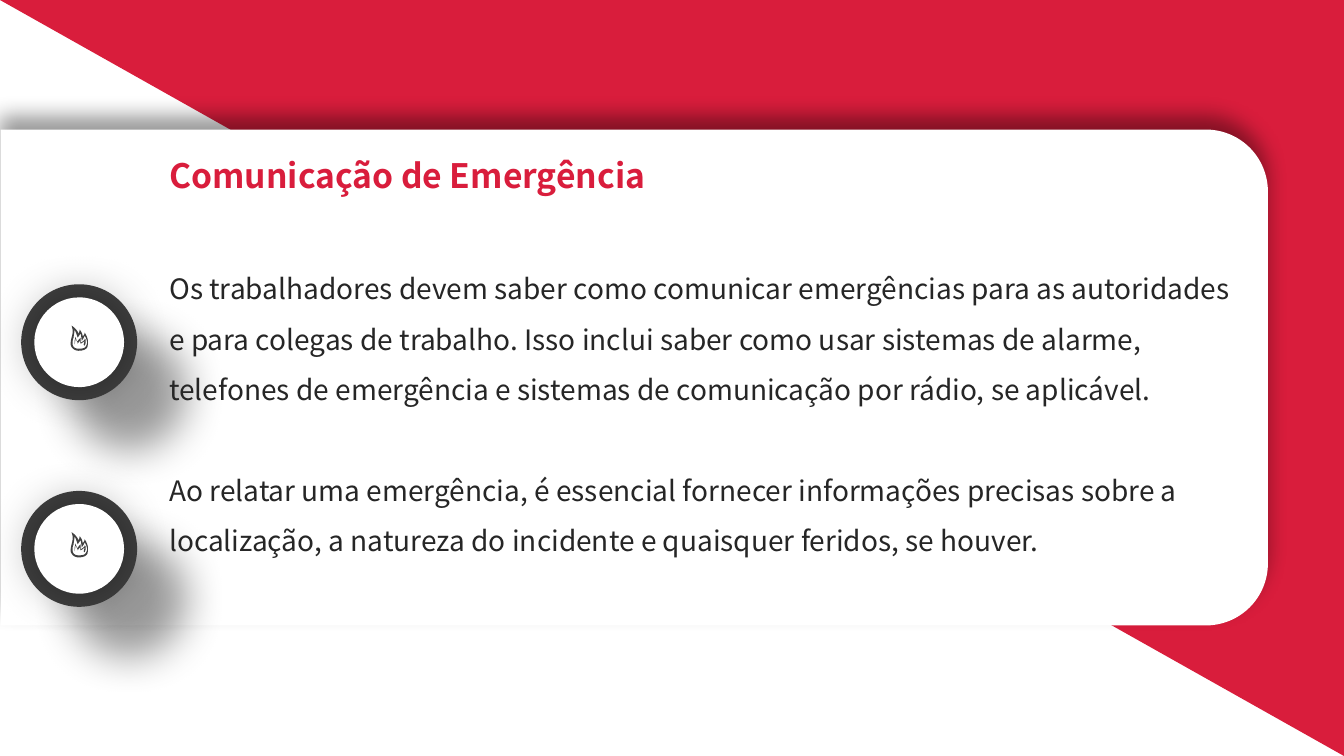
import pptx
import pptx.dml.color
import pptx.enum.shapes
import pptx.enum.text
import pptx.oxml
import pptx.oxml.ns
import pptx.util

Inches = pptx.util.Inches
Pt = pptx.util.Pt
KINDS = pptx.enum.shapes.MSO_SHAPE

# Flame curves in hundredths of an inch: a start, then cubic segments
FLAME = [
    ((16, 19), [(15, 21, 15, 23, 8, 23), (4, 23, 2, 21, 2, 18),
                (2, 16, 2, 14, 3, 12), (3, 10, 4, 7, 4, 4),
                (6, 8, 7, 12, 7, 12), (7, 12, 9, 9, 10, 8),
                (10, 8, 11, 12, 11, 15), (11, 15, 13, 13, 14, 10),
                (16, 13, 17, 17, 16, 19)]),
    ((14, 7), [(14, 9, 12, 11, 12, 11), (12, 7, 9, 4, 9, 4),
               (9, 4, 9, 6, 8, 8), (6, 3, 1, 0, 1, 0),
               (4, 8, 0, 12, 0, 18), (0, 22, 4, 25, 8, 25),
               (15, 25, 17, 22, 17, 20), (18, 16, 17, 11, 14, 7)]),
]
SPARK = [(14, 13), (14, 14), (12.5, 15.5), (10, 17), (10, 12), (8, 14),
         (7, 16), (5.5, 13.5), (5, 11), (4, 15), (4, 19), (4.5, 16), (5, 13),
         (7, 17), (7, 18), (9, 15), (10, 18), (12.5, 16.5), (14, 15),
         (13, 19), (14, 20), (15, 17), (15, 14)]
BODY = [
    "Os trabalhadores devem saber como comunicar emergências para as "
    "autoridades e para colegas de trabalho. Isso inclui saber como usar "
    "sistemas de alarme, telefones de emergência e sistemas de comunicação "
    "por rádio, se aplicável.",
    "Ao relatar uma emergência, é essencial fornecer informações precisas "
    "sobre a localização, a natureza do incidente e quaisquer feridos, se "
    "houver.",
]


def trace(start, curves, steps=6):
    """Return points along a chain of cubic curves."""
    points = [start]
    for ax, ay, bx, by, ex, ey in curves:
        sx, sy = points[-1]
        for step in range(1, steps + 1):
            t = step / steps
            u = 1 - t
            points.append((
                u**3 * sx + 3 * u * u * t * ax + 3 * u * t * t * bx + t**3 * ex,
                u**3 * sy + 3 * u * u * t * ay + 3 * u * t * t * by + t**3 * ey))
    return points


class Deck:
    font = "Noto Sans CJK SC"
    colors = {"red": "D91D3C", "white": "FFFFFF", "dark": "404040",
              "text": "262626", "black": "000000"}

    def __init__(self):
        self.show = pptx.Presentation()
        self.show.slide_width = Inches(13.33)
        self.show.slide_height = Inches(7.5)
        self.slide = self.show.slides.add_slide(self.show.slide_layouts[5])

    def color(self, name):
        return pptx.dml.color.RGBColor.from_string(self.colors[name])

    def paint(self, shape, name):
        shape.shadow.inherit = False
        shape.fill.solid()
        shape.fill.fore_color.rgb = self.color(name)
        shape.line.fill.background()

    def shape(self, kind, box, name, turn=0):
        shape = self.slide.shapes.add_shape(kind, *map(Inches, box))
        shape.rotation = turn
        self.paint(shape, name)
        return shape

    def shade(self, shape, blur, dist=0, angle=0):
        """Add a soft outer shadow; blur and dist in points."""
        effects = shape._element.spPr.find(pptx.oxml.ns.qn("a:effectLst"))
        effects.append(pptx.oxml.parse_xml(
            f'<a:outerShdw {pptx.oxml.ns.nsdecls("a")} blurRad="{Pt(blur)}" '
            f'dist="{Pt(dist)}" dir="{angle * 60000}" algn="ctr" '
            f'rotWithShape="0"><a:srgbClr val="{self.colors["black"]}">'
            '<a:alpha val="40000"/></a:srgbClr></a:outerShdw>'))

    def outline(self, left, top, loops, name):
        """Draw closed loops given in hundredths of an inch."""
        loops = [[(x * 10, y * 10) for x, y in loop] for loop in loops]
        pen = self.slide.shapes.build_freeform(*loops[0][0], scale=Inches(0.001))
        pen.add_line_segments(loops[0][1:])
        for loop in loops[1:]:
            pen.move_to(*loop[0])
            pen.add_line_segments(loop[1:])
        self.paint(pen.convert_to_shape(Inches(left), Inches(top)), name)

    def badge(self, top):
        ring = self.shape(KINDS.OVAL, (0.21, top, 1.15, 1.15), "dark")
        self.shade(ring, 30, 50, 45)
        disc = self.shape(KINDS.OVAL, (0.34, top + 0.13, 0.89, 0.89), "white")
        self.shade(disc, 35)
        flame = [trace(*part) for part in FLAME]
        for loops in (flame, [SPARK]):
            self.outline(0.7, top + 0.41, loops, "dark")

    def fill(self, frame, lines, size, name, bold=False, gap=0):
        """Set the lines as styled paragraphs of a text frame."""
        frame.word_wrap = True
        frame.auto_size = pptx.enum.text.MSO_AUTO_SIZE.NONE
        frame.vertical_anchor = pptx.enum.text.MSO_ANCHOR.TOP
        for index, line in enumerate(lines):
            para = frame.add_paragraph() if index else frame.paragraphs[0]
            para.alignment = pptx.enum.text.PP_ALIGN.LEFT
            para.line_spacing = 1.5
            para.space_before = Pt(gap if index else 0)
            run = para.add_run()
            run.text = line
            run.font.name = self.font
            run.font.size = Pt(size)
            run.font.bold = bold
            run.font.color.rgb = self.color(name)

    def title(self, box, text):
        title = self.slide.shapes.title
        title.left, title.top, title.width, title.height = map(Inches, box)
        self.fill(title.text_frame, [text], 24, "red", bold=True)
        self.slide.shapes._spTree.append(title._element)

    def text(self, box, lines):
        area = self.slide.shapes.add_textbox(*map(Inches, box))
        self.fill(area.text_frame, lines, 20, "text", gap=36)


def main():
    deck = Deck()
    full = (0, 0, 13.33, 7.5)
    deck.shape(KINDS.RECTANGLE, full, "white")
    deck.shape(KINDS.RIGHT_TRIANGLE, full, "red", turn=180)
    panel = deck.shape(KINDS.ROUND_2_SAME_RECTANGLE,
                       (3.83, -2.54, 4.92, 12.57), "white", turn=90)
    panel.adjustments[0] = 0.125
    deck.shade(panel, 15, 9, 270)
    for top in (2.82, 4.87):
        deck.badge(top)
    deck.title((1.58, 1.29, 10.81, 0.8), "Comunicação de Emergência")
    deck.text((1.58, 2.48, 10.81, 4.06), BODY)
    deck.show.save("out.pptx")


if __name__ == "__main__":
    main()
